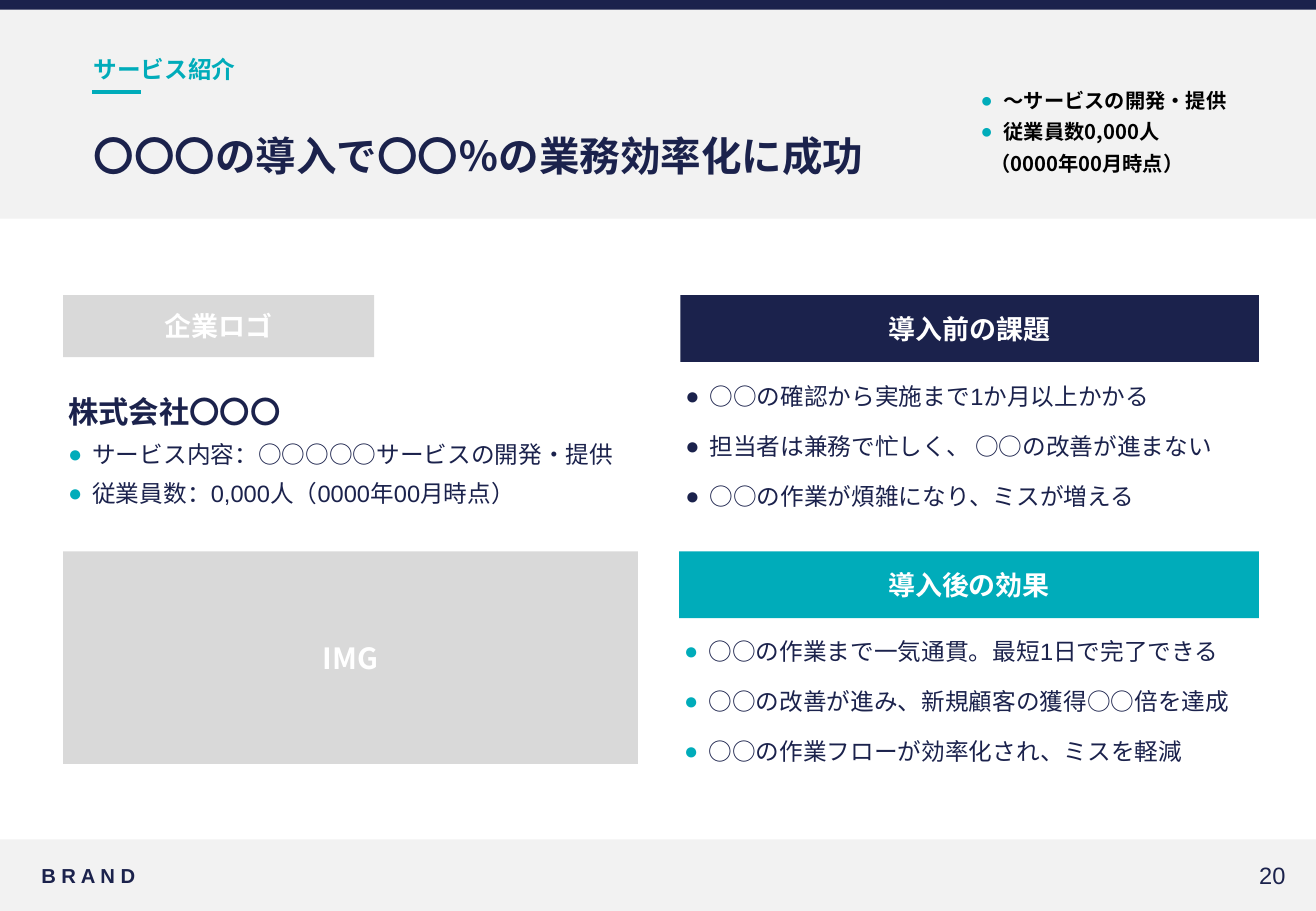
from dataclasses import dataclass
from typing import Optional

from lxml.etree import SubElement
from pptx import Presentation
from pptx.dml.color import RGBColor
from pptx.enum.shapes import MSO_CONNECTOR, MSO_SHAPE
from pptx.enum.text import MSO_ANCHOR as ANCHOR, PP_ALIGN as ALIGN
from pptx.oxml.ns import qn
from pptx.util import Inches, Pt

NAVY, TEAL, BLACK, WHITE = "1B224C", "00ACBA", "000000", "FFFFFF"
PALE, GREY = "F2F2F2", "D9D9D9"
NOTO, ARIAL = "Noto Sans CJK JP", "Arial"
Box = tuple[float, float, float, float]


@dataclass
class Para:
    text: str
    size: float
    color: str = NAVY
    font: str = NOTO
    bold: bool = False
    align: ALIGN = ALIGN.LEFT
    bullet: Optional[str] = None
    indent: float = 0
    spacing: Optional[float] = None
    before: float = 0
    after: float = 0


@dataclass
class Panel:
    box: Box
    fill: str
    label: Optional[str] = None
    size: float = 16


@dataclass
class TextBlock:
    box: Box
    paras: list[Para]
    anchor: ANCHOR = ANCHOR.TOP
    wrap: bool = True


def rgb(color: str) -> RGBColor:
    return RGBColor.from_string(color)


def write(tf, paras: list[Para], anchor: ANCHOR, wrap: bool = True) -> None:
    tf.word_wrap = wrap
    tf.vertical_anchor = anchor
    tf.margin_left = tf.margin_right = Inches(0.04)
    tf.margin_top = tf.margin_bottom = Inches(0.04)
    tf.text = "\n".join(para.text for para in paras)
    for p, para in zip(tf.paragraphs, paras):
        p.alignment = para.align
        p.line_spacing = para.spacing
        p.space_before, p.space_after = Pt(para.before), Pt(para.after)
        p_pr = p._p.get_or_add_pPr()
        p_pr.set("marL", str(Inches(para.indent)))
        p_pr.set("indent", str(-Inches(para.indent) if para.bullet else 0))
        if para.bullet:
            bu_clr = SubElement(p_pr, qn("a:buClr"))
            SubElement(bu_clr, qn("a:srgbClr")).set("val", para.bullet)
            SubElement(p_pr, qn("a:buFont")).set("typeface", ARIAL)
            SubElement(p_pr, qn("a:buChar")).set("char", "●")
        for r in p.runs:
            r.font.size, r.font.bold = Pt(para.size), para.bold
            r.font.name = para.font
            r.font.color.rgb = rgb(para.color)
            SubElement(r._r.get_or_add_rPr(), qn("a:ea")).set("typeface", NOTO)


def add_panel(s, panel: Panel) -> None:
    sp = s.shapes.add_shape(MSO_SHAPE.RECTANGLE, *map(Inches, panel.box))
    sp.shadow.inherit = False
    sp.fill.solid()
    sp.fill.fore_color.rgb = rgb(panel.fill)
    sp.line.fill.background()
    if panel.label:
        label = Para(panel.label, panel.size, WHITE, bold=True, align=ALIGN.CENTER)
        write(sp.text_frame, [label], ANCHOR.MIDDLE)


def add_text(s, block: TextBlock) -> None:
    tb = s.shapes.add_textbox(*map(Inches, block.box))
    write(tb.text_frame, block.paras, block.anchor, block.wrap)


def add_rule(s, x1: float, x2: float, y: float) -> None:
    line = s.shapes.add_connector(
        MSO_CONNECTOR.STRAIGHT, Inches(x1), Inches(y), Inches(x2), Inches(y))
    line.line.color.rgb = rgb(TEAL)
    line.line.width = Pt(2.5)
    SubElement(line._element.spPr, qn("a:effectLst"))


def points(color: str, *texts: str) -> list[Para]:
    return [Para(text, 14, font=ARIAL, bullet=color, indent=0.2,
                 spacing=1.5, after=4.3) for text in texts]


PANELS = [
    # Page bands
    Panel((0, 6.91, 10.83, 0.59), PALE),
    Panel((0, 0, 10.83, 1.8), PALE),
    Panel((0, 0, 10.83, 0.08), NAVY),
    # Section headings
    Panel((5.6, 2.43, 4.76, 0.55), NAVY, "導入前の課題"),
    Panel((5.59, 4.54, 4.77, 0.55), TEAL, "導入後の効果"),
    # Image areas
    Panel((0.52, 2.43, 2.56, 0.51), GREY, "企業ロゴ"),
    Panel((0.52, 4.54, 4.73, 1.75), GREY, "IMG", 17.3),
]

BLOCKS = [
    # Footer
    TextBlock((0.3, 7.05, 1.07, 0.31),
              [Para("B R A N D", 12, font=ARIAL, bold=True)], ANCHOR.MIDDLE, False),
    TextBlock((9.55, 7.05, 1.07, 0.31),
              [Para("20", 14, font=ARIAL, align=ALIGN.RIGHT)], ANCHOR.MIDDLE, False),
    # Header
    TextBlock((0.73, 0.41, 9.37, 0.28), [Para("サービス紹介", 14, TEAL, bold=True)]),
    TextBlock((0.73, 0.98, 9.37, 0.59),
              [Para("〇〇〇の導入で〇〇％の業務効率化に成功", 24, bold=True)], ANCHOR.MIDDLE),
    TextBlock((8.03, 0.69, 2.29, 0.79), [
        Para("〜サービスの開発・提供", 12, BLACK, bold=True, bullet=TEAL, indent=0.19),
        Para("従業員数0,000人", 12, BLACK, bold=True, bullet=TEAL, indent=0.19, before=4),
        Para("（0000年00月時点）", 12, BLACK, bold=True, indent=0.08, before=4),
    ]),
    # Before and after
    TextBlock((5.6, 2.99, 4.76, 1.22), points(
        NAVY,
        "○○の確認から実施まで1か月以上かかる",
        "担当者は兼務で忙しく、 ○○の改善が進まない",
        "○○の作業が煩雑になり、ミスが増える")),
    TextBlock((5.59, 5.09, 4.77, 1.22), points(
        TEAL,
        "○○の作業まで一気通貫。最短1日で完了できる",
        "○○の改善が進み、新規顧客の獲得○○倍を達成",
        "○○の作業フローが効率化され、ミスを軽減")),
    # Company profile
    TextBlock((0.52, 3.05, 4.9, 1.35), [
        Para("株式会社〇〇〇", 18, font=ARIAL, bold=True, spacing=1.5, after=6),
        Para("サービス内容：○○○○○サービスの開発・提供", 14, font=ARIAL,
             bullet=TEAL, indent=0.2, after=6),
        Para("従業員数：0,000人（0000年00月時点）", 14, font=ARIAL,
             bullet=TEAL, indent=0.2, after=6),
    ]),
]


def main() -> None:
    prs = Presentation()
    prs.slide_width, prs.slide_height = Inches(10.83), Inches(7.5)
    s = prs.slides.add_slide(prs.slide_layouts[6])
    for panel in PANELS:
        add_panel(s, panel)
    add_rule(s, 0.76, 1.16, 0.76)
    for block in BLOCKS:
        add_text(s, block)
    prs.save("out.pptx")


if __name__ == "__main__":
    main()
